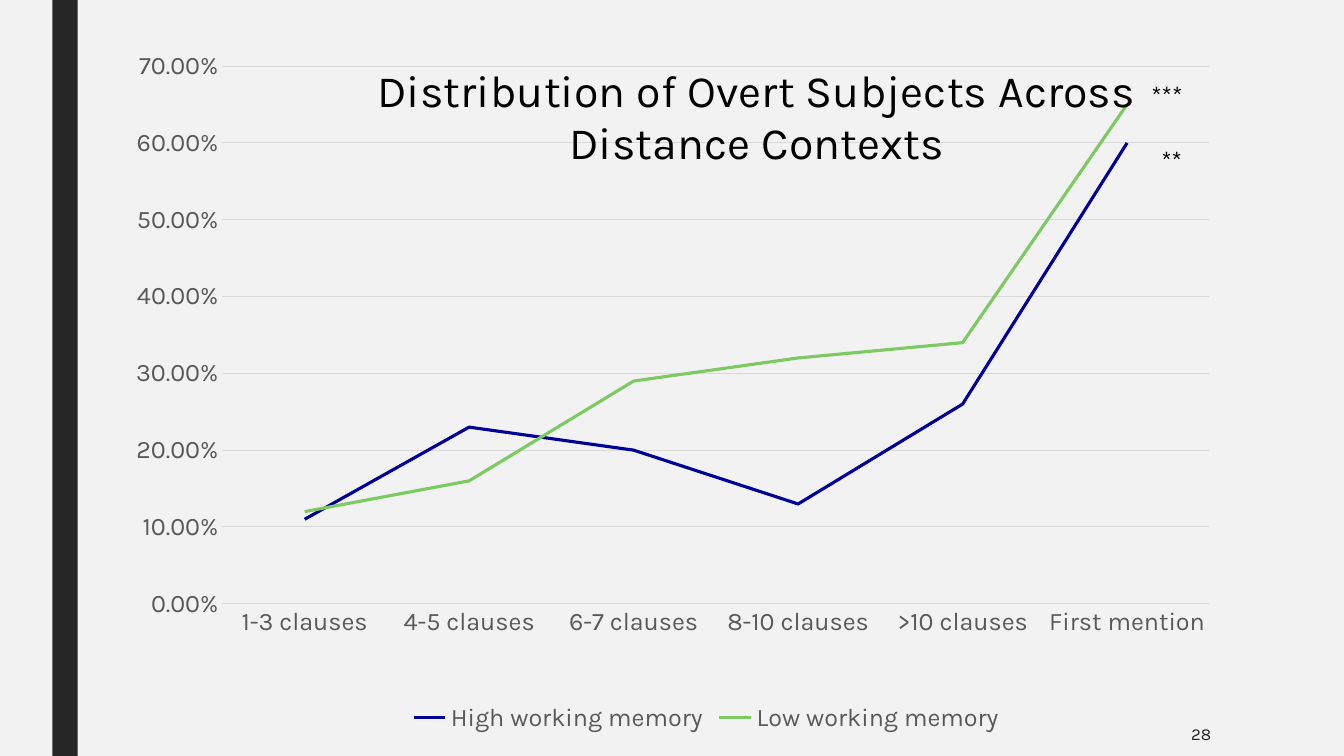
"""Build a slide with a line chart of overt subjects by distance context."""
import pptx
import pptx.util
import pptx.chart.data
import pptx.dml.color
import pptx.enum.chart
import pptx.enum.shapes
import pptx.enum.text
import pptx.oxml

Inches = pptx.util.Inches
Pt = pptx.util.Pt
FONT = "Karla"
WIDE, HIGH = 10.65, 6.82
COLORS = {
    "back": "F2F2F2", "band": "262626", "text": "000000", "label": "595959",
    "grid": "D9D9D9", "high": "000099", "low": "7CCA62",
}
CATS = ["1-3 clauses", "4-5 clauses", "6-7 clauses", "8-10 clauses",
        ">10 clauses", "First mention"]
SERIES = [
    ("High working memory", "high", [0.11, 0.23, 0.2, 0.13, 0.26, 0.6]),
    ("Low working memory", "low", [0.12, 0.16, 0.29, 0.32, 0.34, 0.65]),
]


def color(name):
    """Return the named colour."""
    return pptx.dml.color.RGBColor.from_string(COLORS[name])


def style(font, size, name):
    """Set the face, size, colour and kerning of a font."""
    font.name = FONT
    font.size = Pt(size)
    font.bold = False
    font.color.rgb = color(name)
    font._element.set("kern", "1200")


def stroke(line, name, width):
    """Set the colour and width of a line."""
    line.color.rgb = color(name)
    line.width = Pt(width)


def add_band(slide):
    """Add the dark vertical band."""
    band = slide.shapes.add_shape(
        pptx.enum.shapes.MSO_SHAPE.RECTANGLE,
        Inches(0.52), 0, Inches(0.25), Inches(7.5))
    band.shadow.inherit = False
    band.fill.solid()
    band.fill.fore_color.rgb = color("band")
    band.line.fill.background()


def add_text(slide, text, box, size, name, right=False):
    """Add one line of text, at the left or the middle right of its box."""
    frame = slide.shapes.add_textbox(*map(Inches, box)).text_frame
    frame.word_wrap = True
    para = frame.paragraphs[0]
    if right:
        frame.vertical_anchor = pptx.enum.text.MSO_ANCHOR.MIDDLE
        para.alignment = pptx.enum.text.PP_ALIGN.RIGHT
    run = para.add_run()
    run.text = text
    style(run.font, size, name)


def place(item, index, left, top, size=None):
    """Put a chart part at a place in the chart, given in inches."""
    for old in item.findall(pptx.oxml.ns.qn("c:layout")):
        item.remove(old)
    spots = {"x": left / WIDE, "y": top / HIGH}
    target = ""
    if size:
        spots.update(w=size[0] / WIDE, h=size[1] / HIGH)
        target = '<c:layoutTarget val="inner"/>'
    modes = '<c:xMode val="edge"/><c:yMode val="edge"/>'
    sizes = "".join(f'<c:{key} val="{val:.5f}"/>' for key, val in spots.items())
    layout = pptx.oxml.parse_xml(
        f'<c:layout {pptx.oxml.ns.nsdecls("c")}><c:manualLayout>'
        f'{target}{modes}{sizes}</c:manualLayout></c:layout>')
    item.insert(index, layout)


def add_title(chart):
    """Add the chart title over the plot."""
    title = chart.chart_title
    run = title.text_frame.paragraphs[0].add_run()
    run.text = "Distribution of Overt Subjects Across Distance Contexts"
    style(run.font, 32, "text")
    place(title._element, 1, 2.29, 0.01)
    for flag in title._element.findall(pptx.oxml.ns.qn("c:overlay")):
        flag.set("val", "1")


def add_legend(chart):
    """Add the legend under the plot."""
    chart.has_legend = True
    legend = chart.legend
    legend.position = pptx.enum.chart.XL_LEGEND_POSITION.BOTTOM
    legend.include_in_layout = False
    style(legend.font, 18, "label")
    place(legend._element, 1, 2.65, 6.43)


def style_axes(chart):
    """Format both axes and the grid."""
    none = pptx.enum.chart.XL_TICK_MARK.NONE
    for axis in (chart.category_axis, chart.value_axis):
        axis.major_tick_mark = none
        axis.minor_tick_mark = none
        style(axis.tick_labels.font, 18, "label")
    stroke(chart.category_axis.format.line, "grid", 0.75)
    value = chart.value_axis
    value.minimum_scale, value.maximum_scale, value.major_unit = 0, 0.7, 0.1
    value.tick_labels.number_format = "0.00%"
    value.tick_labels.number_format_is_linked = False
    value.format.line.fill.background()
    stroke(value.major_gridlines.format.line, "grid", 0.75)


def add_chart(slide):
    """Add the line chart."""
    data = pptx.chart.data.CategoryChartData(number_format="0.00%")
    data.categories = CATS
    for name, _, vals in SERIES:
        data.add_series(name, vals)
    box = map(Inches, (1.35, 0.51, WIDE, HIGH))
    chart = slide.shapes.add_chart(
        pptx.enum.chart.XL_CHART_TYPE.LINE, *box, data).chart
    style(chart.font, 10, "text")
    add_title(chart)
    style_axes(chart)
    plot = chart.plots[0]
    plot.vary_by_categories = False
    for series, (_, name, _) in zip(plot.series, SERIES):
        series.smooth = False
        series.marker.style = pptx.enum.chart.XL_MARKER_STYLE.NONE
        stroke(series.format.line, name, 2.25)
    add_legend(chart)
    place(chart._chartSpace.chart.plotArea, 0, 0.83, 0.14, (9.82, 5.34))


def main():
    """Build and save the slide."""
    deck = pptx.Presentation()
    deck.slide_width, deck.slide_height = Inches(13.33), Inches(7.5)
    slide = deck.slides.add_slide(deck.slide_layouts[6])
    slide.background.fill.solid()
    slide.background.fill.fore_color.rgb = color("back")
    add_band(slide)
    add_chart(slide)
    add_text(slide, "***", (11.32, 0.74, 0.68, 0.4), 18, "text")
    add_text(slide, "**", (11.42, 1.38, 0.68, 0.4), 18, "text")
    add_text(slide, "28", (10.36, 7.06, 1.75, 0.44), 12, "band", right=True)
    deck.save("out.pptx")


if __name__ == "__main__":
    main()
